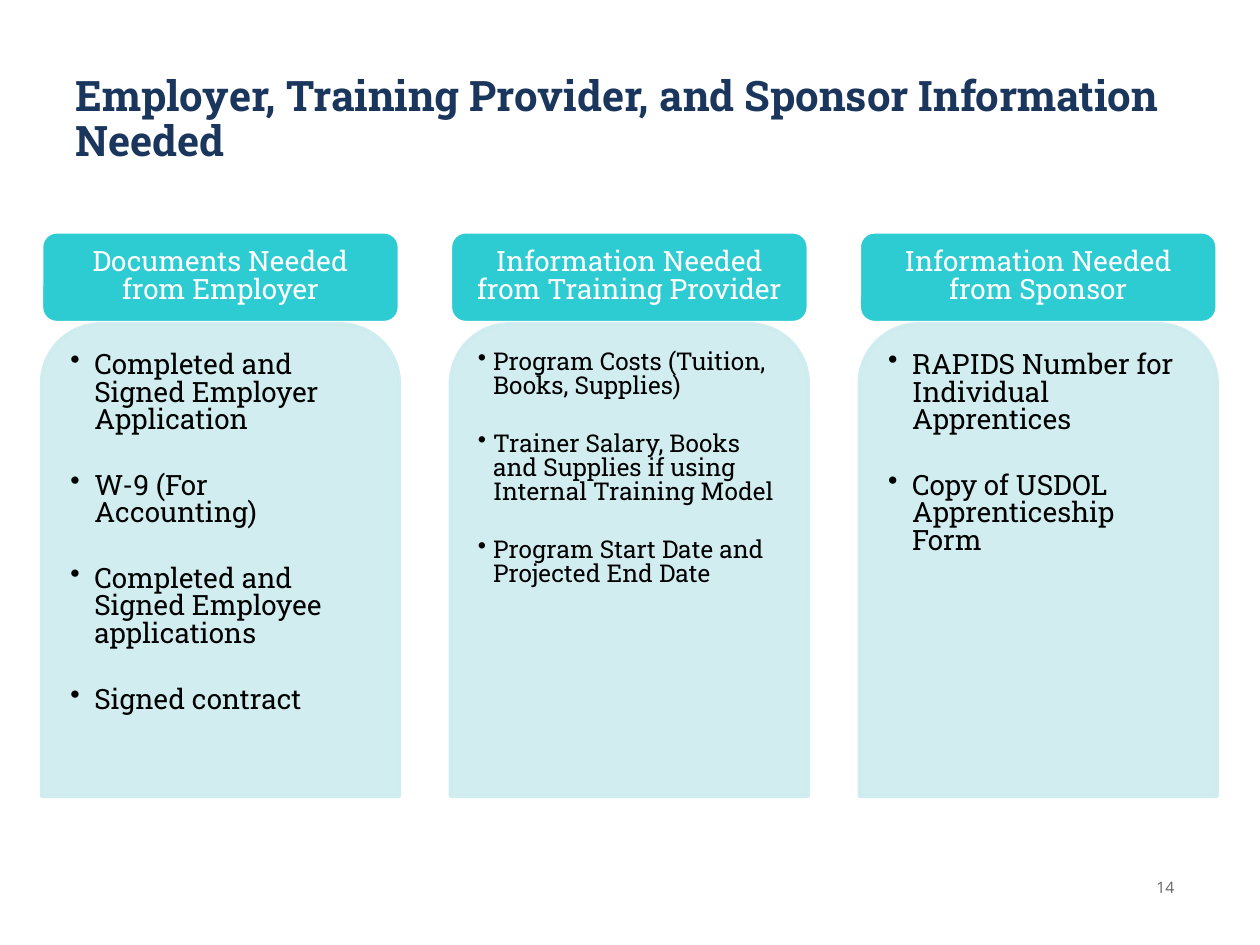
from lxml import etree
from pptx import Presentation
from pptx.dml.color import RGBColor
from pptx.enum.shapes import MSO_SHAPE
from pptx.enum.text import MSO_ANCHOR, MSO_AUTO_SIZE, PP_ALIGN
from pptx.oxml.ns import qn
from pptx.util import Inches, Pt

NAVY = RGBColor(0x1B, 0x36, 0x5D)
TEAL = RGBColor(0x2D, 0xCC, 0xD3)
PALE = RGBColor(0xCD, 0xEC, 0xEF)
GREY = RGBColor(0x66, 0x66, 0x66)
WHITE = RGBColor(0xFF, 0xFF, 0xFF)
BLACK = RGBColor(0, 0, 0)
ROUNDED = MSO_SHAPE.ROUNDED_RECTANGLE
ROUNDED_TOP = MSO_SHAPE.ROUND_2_SAME_RECTANGLE
LEFT, CENTER = PP_ALIGN.LEFT, PP_ALIGN.CENTER
TOP, MIDDLE = MSO_ANCHOR.TOP, MSO_ANCHOR.MIDDLE
NO_AUTOFIT = MSO_AUTO_SIZE.NONE

COLUMN_LEFT, COLUMN_STEP, COLUMN_WIDTH = 0.33, 3.245, 2.84
COLUMNS = [
    ("Documents Needed from Employer",
     ["Completed and Signed Employer Application", "W-9 (For Accounting)",
      "Completed and Signed Employee applications", "Signed contract"],
     dict(size=16, indent=0.19, space=21.75, margins=(0.09, 0.09, 0.12, 0.14))),
    ("Information Needed from Training Provider",
     ["Program Costs (Tuition, Books, Supplies)",
      "Trainer Salary, Books and Supplies if using Internal Training Model",
      "Program Start Date and Projected End Date"],
     dict(size=14, indent=0.12, space=19.25, margins=(0.08, 0.08, 0.11, 0.12))),
    ("Information Needed from Sponsor",
     ["RAPIDS Number for Individual Apprentices",
      "Copy of USDOL Apprenticeship Form"],
     dict(size=16, indent=0.19, space=21.75, margins=(0.09, 0.09, 0.12, 0.14))),
]


def add_bullet(para, indent):
    properties = para._p.get_or_add_pPr()
    properties.set("marL", str(Inches(indent)))
    properties.set("indent", str(-Inches(indent)))
    etree.SubElement(properties, qn("a:buChar")).set("char", "•")


def write(box, *texts, size, color, font="Roboto Slab", bold=False, align=LEFT,
          anchor=TOP, spacing=0.82, space=0, indent=None,
          margins=(0.1, 0.05, 0.1, 0.05)):
    frame = box.text_frame
    frame.word_wrap = True
    frame.auto_size = NO_AUTOFIT
    frame.vertical_anchor = anchor
    (frame.margin_left, frame.margin_top,
     frame.margin_right, frame.margin_bottom) = map(Inches, margins)
    for index, text in enumerate(texts):
        para = frame.add_paragraph() if index else frame.paragraphs[0]
        if indent:
            add_bullet(para, indent)
        para.alignment = align
        para.line_spacing = spacing
        para.space_before = Pt(space if index else 0)
        span = para.add_run()
        span.text = text
        span.font.name = font
        span.font.size = Pt(size)
        span.font.bold = bold
        span.font.color.rgb = color


def set_opacity(format_element, percent):
    color = format_element.find(".//" + qn("a:srgbClr"))
    etree.SubElement(color, qn("a:alpha")).set("val", str(percent * 1000))


class SlideBuilder:
    def __init__(self, deck):
        self.page = deck.slides.add_slide(deck.slide_layouts[5])

    def title(self, text):
        box = self.page.shapes.title
        box.left, box.top = Inches(0.5), Inches(0.33)
        box.width, box.height = Inches(9), Inches(1.25)
        write(box, text, size=24, color=NAVY, bold=True, anchor=MIDDLE, spacing=0.9)

    def shape(self, kind, left, top, height, fill, line):
        box = self.page.shapes.add_shape(
            kind, Inches(left), Inches(top), Inches(COLUMN_WIDTH), Inches(height))
        box.shadow.inherit = False
        box.fill.solid()
        box.fill.fore_color.rgb = fill
        box.line.color.rgb = line
        box.line.width = Pt(2)
        return box

    def header(self, left, text):
        box = self.shape(ROUNDED, left, 1.84, 0.72, TEAL, WHITE)
        write(box, text, size=16, color=WHITE, align=CENTER, anchor=MIDDLE,
              margins=(0.12, 0.07, 0.12, 0.07))

    def panel(self, left, items, style):
        box = self.shape(ROUNDED_TOP, left, 2.57, 3.75, PALE, PALE)
        properties = box._element.spPr
        for tag in ("a:solidFill", "a:ln"):
            set_opacity(properties.find(qn(tag)), 90)
        write(box, *items, color=BLACK, **style)

    def page_number(self, text):
        box = self.page.shapes.add_textbox(
            Inches(9), Inches(6.83), Inches(0.5), Inches(0.42))
        write(box, text, size=9, color=GREY, font="Open Sans", align=CENTER,
              anchor=MIDDLE, spacing=1.0)


def main():
    deck = Presentation()
    deck.slide_width, deck.slide_height = Inches(10), Inches(7.5)
    builder = SlideBuilder(deck)
    builder.title("Employer, Training Provider, and Sponsor Information Needed")
    for index, (heading, items, style) in enumerate(COLUMNS):
        left = COLUMN_LEFT + index * COLUMN_STEP
        builder.header(left, heading)
        builder.panel(left, items, style)
    builder.page_number("14")
    deck.save("out.pptx")


if __name__ == "__main__":
    main()
